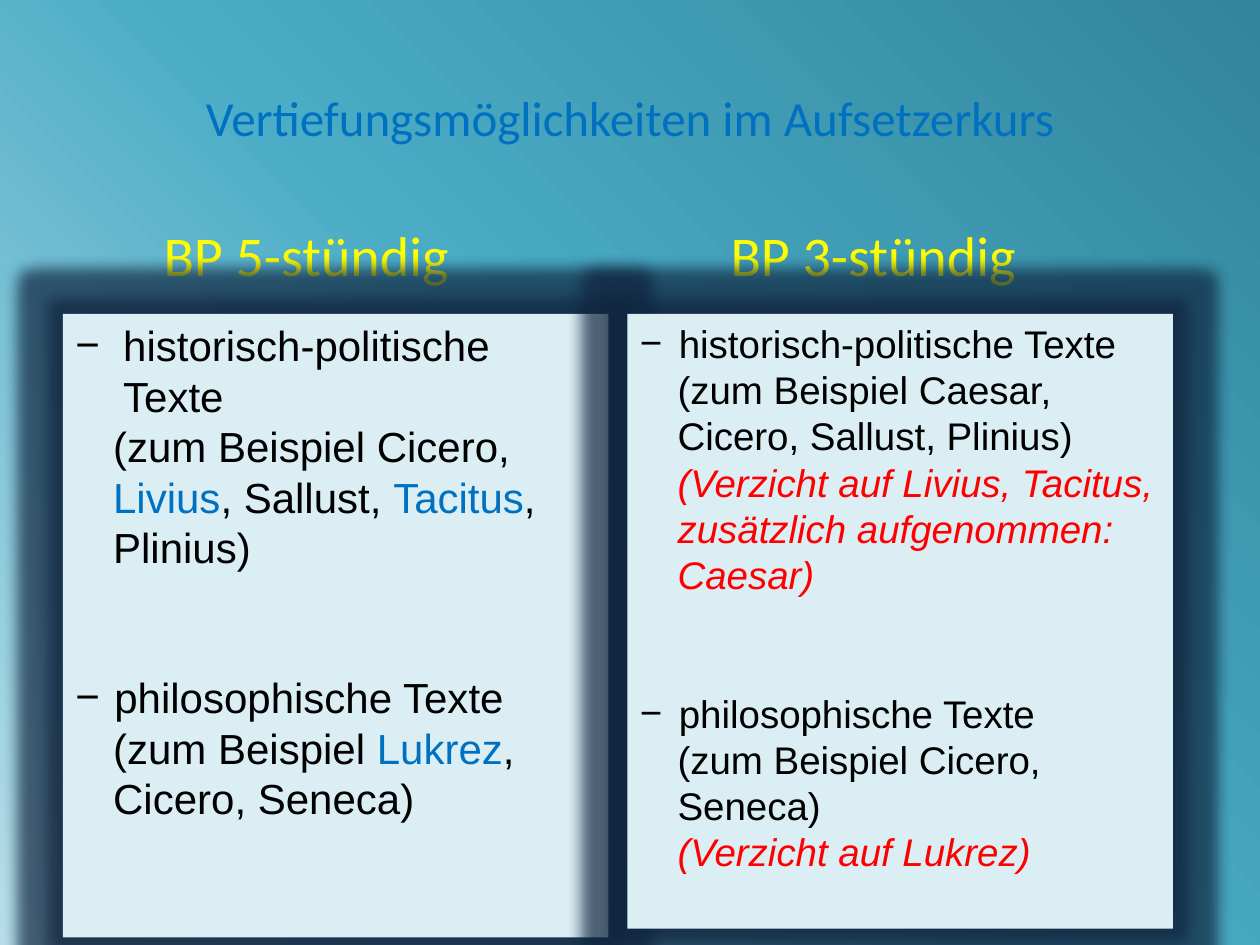
from lxml import etree
from pptx import Presentation
from pptx.dml.color import RGBColor
from pptx.enum.shapes import MSO_SHAPE
from pptx.enum.text import MSO_ANCHOR, PP_ALIGN
from pptx.oxml import parse_xml
from pptx.util import Inches, Pt

RECT = MSO_SHAPE.RECTANGLE
TOP, MIDDLE = MSO_ANCHOR.TOP, MSO_ANCHOR.MIDDLE
LEFT, CENTER = PP_ALIGN.LEFT, PP_ALIGN.CENTER
BLACK = RGBColor(0x00, 0x00, 0x00)
BLUE = RGBColor(0x00, 0x70, 0xC0)
RED = RGBColor(0xFF, 0x00, 0x00)
YELLOW = RGBColor(0xFF, 0xFF, 0x00)
PALE = RGBColor(0xDB, 0xEE, 0xF4)
NAVY = RGBColor(0x10, 0x25, 0x3F)
NS = "http://schemas.openxmlformats.org/drawingml/2006/main"
DECL = f'xmlns:a="{NS}"'

# Content
TITLE = "Vertiefungsmöglichkeiten im Aufsetzerkurs"
HEADS = ["BP 5-stündig", "BP 3-stündig"]
STOPS = [(0, "31859C"), (50, "4BACC6"), (100, "B7DEE8")]
PLAIN = {"color": BLACK}
NAME = {"color": BLUE}
NOTE = {"color": RED, "italic": True}

# Each paragraph: margin, bullet or not, points before, runs
PANELS = [
    {"height": 4.95, "size": 24, "paras": [
        (0.38, True, 0, [("historisch-politische Texte", PLAIN)]),
        (0.3, False, 0, [("(zum Beispiel Cicero, ", PLAIN), ("Livius", NAME),
                         (", Sallust, ", PLAIN), ("Tacitus", NAME),
                         (", Plinius)", PLAIN)]),
        (0.31, True, 57, [("philosophische Texte", PLAIN)]),
        (0.3, False, 0, [("(zum Beispiel ", PLAIN), ("Lukrez", NAME),
                         (", Cicero, Seneca)", PLAIN)]),
    ]},
    {"height": 4.88, "size": 22, "paras": [
        (0.31, True, 0, [("historisch-politische Texte", PLAIN)]),
        (0.3, False, 0, [("(zum Beispiel Caesar, Cicero, Sallust, Plinius)",
                          PLAIN)]),
        (0.3, False, 0, [("(Verzicht auf Livius, Tacitus, zusätzlich "
                          "aufgenommen: Caesar)", NOTE)]),
        (0.31, True, 53, [("philosophische Texte", PLAIN)]),
        (0.3, False, 0, [("(zum Beispiel Cicero, Seneca)", PLAIN)]),
        (0.3, False, 0, [("(Verzicht auf Lukrez)", NOTE)]),
    ]},
]
PANEL_X, PANEL_Y, PANEL_W, STEP = 0.5, 2.49, 4.33, 4.48
HEAD_X, HEAD_Y, HEAD_W, HEAD_H, HEAD_STEP = 1.2, 1.7, 3.5, 0.7, 4.5


def add_run(para, text, font, size, look):
    run = para.add_run()
    run.text = text
    run.font.name, run.font.size = font, Pt(size)
    for key, value in look.items():
        if key == "color":
            run.font.color.rgb = value
        else:
            setattr(run.font, key, value)


def add_line(box, text, size, color, anchor, align):
    frame = slide.shapes.add_textbox(*map(Inches, box)).text_frame
    frame.word_wrap = True
    frame.vertical_anchor = anchor
    para = frame.paragraphs[0]
    para.alignment = align
    add_run(para, text, "Calibri", size, {"color": color})


def indent(para, margin, bullet):
    props = para._p.get_or_add_pPr()
    props.set("marL", str(Inches(margin)))
    props.set("indent", str(-Inches(margin) if bullet else 0))
    if bullet:
        etree.SubElement(props, f"{{{NS}}}buFont", typeface="Arial")
        etree.SubElement(props, f"{{{NS}}}buChar", char="−")
    else:
        etree.SubElement(props, f"{{{NS}}}buNone")


def add_glow(shape):
    shape._element.spPr.append(parse_xml(
        f'<a:effectLst {DECL}><a:glow rad="{Inches(0.24)}">'
        f'<a:srgbClr val="{NAVY}"><a:alpha val="70000"/></a:srgbClr>'
        f'</a:glow></a:effectLst>'))


def add_panel(left, panel):
    shape = slide.shapes.add_shape(RECT, *map(
        Inches, (left, PANEL_Y, PANEL_W, panel["height"])))
    shape.fill.solid()
    shape.fill.fore_color.rgb = PALE
    shape.line.fill.background()
    add_glow(shape)
    frame = shape.text_frame
    frame.word_wrap = True
    frame.vertical_anchor = TOP
    for i, (margin, bullet, before, runs) in enumerate(panel["paras"]):
        para = frame.add_paragraph() if i else frame.paragraphs[0]
        para.alignment = LEFT
        para.space_before = Pt(before)
        indent(para, margin, bullet)
        for text, look in runs:
            add_run(para, text, "Arial", panel["size"], look)


prs = Presentation()
prs.slide_width, prs.slide_height = Inches(10), Inches(7.5)
slide = prs.slides.add_slide(prs.slide_layouts[6])

# Background gradient from the top right corner
fill = slide.background.fill
fill.gradient()
grad = slide._element.cSld.find(f".//{{{NS}}}gradFill")
stops = "".join(f'<a:gs pos="{pos * 1000}"><a:srgbClr val="{color}"/></a:gs>'
                for pos, color in STOPS)
grad.getparent().replace(grad, parse_xml(
    f'<a:gradFill {DECL} rotWithShape="1"><a:gsLst>{stops}</a:gsLst>'
    f'<a:lin ang="{135 * 60000}" scaled="0"/></a:gradFill>'))

# Title and column heads
add_line((0.5, 0.3, 9, 1.25), TITLE, 28, BLUE, MIDDLE, CENTER)
for i, head in enumerate(HEADS):
    add_line((HEAD_X + i * HEAD_STEP, HEAD_Y, HEAD_W, HEAD_H),
             head, 32, YELLOW, TOP, LEFT)

# Text panels
for i, panel in enumerate(PANELS):
    add_panel(PANEL_X + i * STEP, panel)

prs.save("out.pptx")
